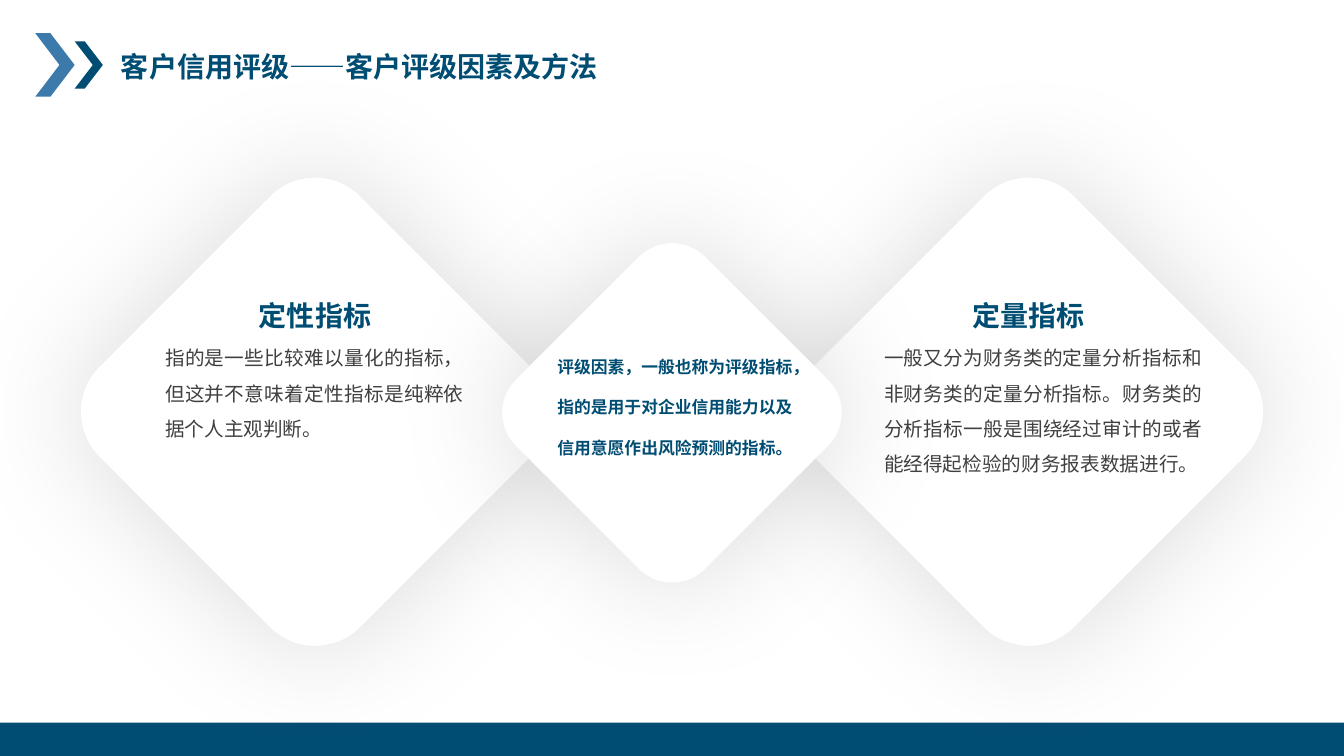
from lxml.etree import SubElement
from pptx import Presentation
from pptx.dml.color import RGBColor
from pptx.enum.shapes import MSO_SHAPE
from pptx.enum.text import MSO_ANCHOR, MSO_AUTO_SIZE, PP_ALIGN
from pptx.oxml.ns import qn
from pptx.util import Inches, Pt

COLORS = {"navy": "004D73", "blue": "3C7AAB", "body": "404040",
          "white": "FFFFFF", "shadow": "000000"}
FONT = "Noto Sans CJK SC"
FRAME = {"word_wrap": True, "auto_size": MSO_AUTO_SIZE.NONE,
         "vertical_anchor": MSO_ANCHOR.TOP,
         "margin_left": Inches(0.1), "margin_right": Inches(0.1),
         "margin_top": Inches(0.05), "margin_bottom": Inches(0.05)}
STYLES = {
    "title": {"font": {"size": Pt(20), "bold": True}, "color": "navy",
              "paragraph": {"alignment": PP_ALIGN.LEFT, "line_spacing": 1.0}},
    "heading": {"font": {"size": Pt(20), "bold": True}, "color": "navy",
                "paragraph": {"alignment": PP_ALIGN.CENTER, "line_spacing": 1.5}},
    "body": {"font": {"size": Pt(14), "bold": False}, "color": "body",
             "paragraph": {"alignment": PP_ALIGN.JUSTIFY, "line_spacing": 1.5}},
    "center": {"font": {"size": Pt(12), "bold": True}, "color": "navy",
               "paragraph": {"alignment": PP_ALIGN.LEFT, "line_spacing": 2.0}},
}


def rgb(name):
    """Return the named colour."""
    return RGBColor.from_string(COLORS[name])


def apply(target, values):
    """Set every format value on the target."""
    for key, value in values.items():
        setattr(target, key, value)


def paint(shape, color):
    """Fill a shape with a flat colour, without outline or shadow."""
    shape.shadow.inherit = False
    shape.fill.solid()
    shape.fill.fore_color.rgb = rgb(color)
    shape.line.fill.background()


def write(holder, wording, style):
    """Write one styled paragraph into a text holder."""
    frame = holder.text_frame
    apply(frame, FRAME)
    paragraph = frame.paragraphs[0]
    apply(paragraph, STYLES[style]["paragraph"])
    run = paragraph.add_run()
    run.text = wording
    apply(run.font, {"name": FONT, **STYLES[style]["font"]})
    run.font.color.rgb = rgb(STYLES[style]["color"])
    SubElement(run.font._element, qn("a:ea"), typeface=FONT)


def add_text(slide, box, wording, style):
    """Add a text box at the given box."""
    write(slide.shapes.add_textbox(*map(Inches, box)), wording, style)


def add_chevron(slide, box, band, color):
    """Draw a right-pointing chevron whose arms are as wide as the band."""
    left, top, width, height = box
    right, middle, bottom = left + width, top + height / 2, top + height
    outline = [(left, top), (left + band, top), (right, middle),
               (left + band, bottom), (left, bottom), (right - band, middle)]
    points = [(Inches(x), Inches(y)) for x, y in outline]
    builder = slide.shapes.build_freeform(*points[0], scale=1.0)
    builder.add_line_segments(points[1:], close=True)
    paint(builder.convert_to_shape(), color)


def add_header(slide, box, wording):
    """Place the two chevrons and the title in the header box."""
    left, top, width, height = box
    add_chevron(slide, (left, top, 0.39, height), 0.15, "blue")
    add_chevron(slide, (left + 0.39, top + 0.08, 0.28, 0.47), 0.1, "navy")
    title = slide.shapes.title
    apply(title, {"left": Inches(left + 0.75), "top": Inches(top + 0.11),
                  "width": Inches(width - 0.75), "height": Inches(0.44)})
    write(title, wording, "title")


def add_footer(slide, box):
    """Fill the footer band."""
    paint(slide.shapes.add_shape(MSO_SHAPE.RECTANGLE, *map(Inches, box)), "navy")


def add_diamond(slide, box):
    """Draw a white rounded diamond with a soft glow-like shadow."""
    diamond = slide.shapes.add_shape(MSO_SHAPE.ROUNDED_RECTANGLE, *map(Inches, box))
    paint(diamond, "white")
    diamond.rotation = 45
    diamond.line.color.rgb = rgb("white")
    diamond.line.width = Pt(4.5)
    effects = diamond._element.spPr.find(qn("a:effectLst"))
    shadow = SubElement(effects, qn("a:outerShdw"), blurRad=str(Pt(90)),
                        dist="0", dir="0", algn="ctr", rotWithShape="0")
    tint = SubElement(shadow, qn("a:srgbClr"), val=COLORS["shadow"])
    SubElement(tint, qn("a:alpha"), val="15000")


def add_indicator(slide, box, heading, body, body_offset, body_width):
    """Place a diamond with a centred heading and a body below it."""
    left, top, width, _ = box
    add_diamond(slide, box)
    add_text(slide, (left + body_offset, top + 0.98, body_width, 1.47), body, "body")
    add_text(slide, (left, top + 0.46, width, 0.55), heading, "heading")


def add_factors(slide, box, wording):
    """Place the middle diamond with its definition."""
    left, top, width, _ = box
    add_diamond(slide, box)
    add_text(slide, (left + 0.06, top + 0.49, width - 0.03, 1.25), wording, "center")


def main():
    """Build and save the slide."""
    deck = Presentation()
    apply(deck, {"slide_width": Inches(13.33), "slide_height": Inches(7.5)})
    slide = deck.slides.add_slide(deck.slide_layouts[5])
    add_header(slide, (0.35, 0.33, 6.54, 0.63), "客户信用评级——客户评级因素及方法")
    add_footer(slide, (0, 7.17, 13.33, 0.33))
    add_indicator(slide, (1.33, 2.29, 3.59, 3.59), "定性指标",
                  "指的是一些比较难以量化的指标，但这并不意味着定性指标是纯粹依据个人主观判断。",
                  0.21, 3.16)
    add_indicator(slide, (8.41, 2.29, 3.59, 3.59), "定量指标",
                  "一般又分为财务类的定量分析指标和非财务类的定量分析指标。"
                  "财务类的分析指标一般是围绕经过审计的或者能经得起检验的财务报表数据进行。",
                  0.26, 3.35)
    add_factors(slide, (5.37, 2.8, 2.59, 2.59),
                "评级因素，一般也称为评级指标，指的是用于对企业信用能力以及信用意愿作出风险预测的指标。")
    deck.save("out.pptx")


if __name__ == "__main__":
    main()
